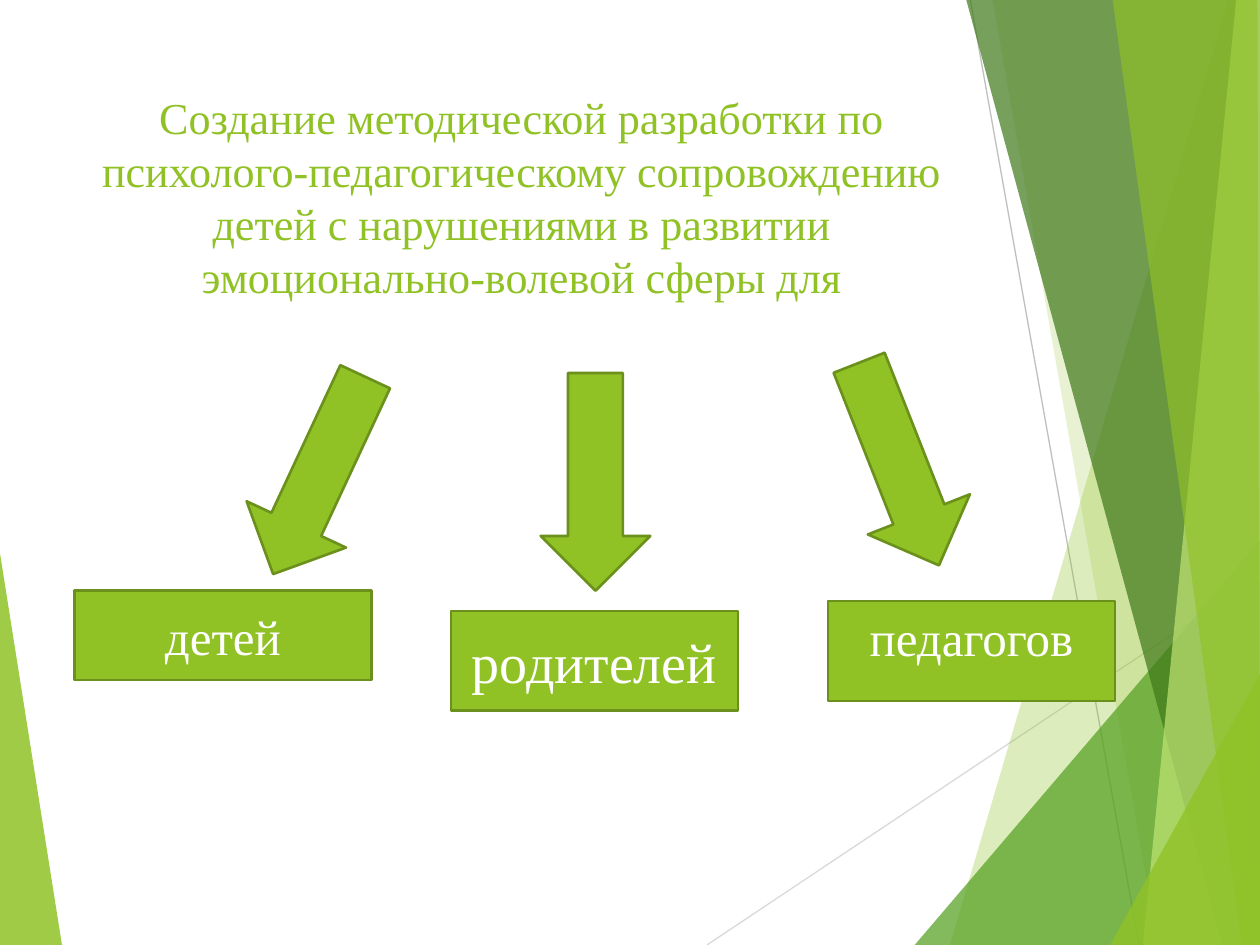
import pptx
import pptx.util
import pptx.dml.color
import pptx.enum.shapes
import pptx.enum.text
import pptx.oxml
import pptx.oxml.ns

Cm, Pt = pptx.util.Cm, pptx.util.Pt
RGBColor = pptx.dml.color.RGBColor
SHAPE = pptx.enum.shapes.MSO_SHAPE
ANCHOR = pptx.enum.text.MSO_ANCHOR
CENTER = pptx.enum.text.PP_ALIGN.CENTER

LIME = RGBColor(0x90, 0xC2, 0x26)
OLIVE = RGBColor(0x6B, 0x90, 0x1C)
GREEN = RGBColor(0x54, 0xA0, 0x21)
FOREST = RGBColor(0x3F, 0x78, 0x19)
PALE = RGBColor(0xC0, 0xE4, 0x74)
GREY = RGBColor(0xBF, 0xBF, 0xBF)
LIGHT_GREY = RGBColor(0xD9, 0xD9, 0xD9)
WHITE = RGBColor(0xFF, 0xFF, 0xFF)
FONT = "Times New Roman"


def write(tf, text, size, color):
    p = tf.paragraphs[0]
    p.alignment = CENTER
    r = p.add_run()
    r.text = text
    for name, value in {"name": FONT, "size": Pt(size)}.items():
        setattr(r.font, name, value)
    r.font.color.rgb = color
    return p


def add_facet(s, x, y, points, color, opacity):
    """Draw a translucent polygon; points are in cm from (x, y)."""
    corners = [(Cm(x + dx), Cm(y + dy)) for dx, dy in points]
    builder = s.shapes.build_freeform(*corners[0])
    builder.add_line_segments(corners[1:], close=True)
    sp = builder.convert_to_shape()
    sp.shadow.inherit = False
    sp.fill.solid()
    sp.fill.fore_color.rgb = color
    sp.line.fill.background()
    clr = sp.fill._xPr.find(".//" + pptx.oxml.ns.qn("a:srgbClr"))
    alpha = pptx.oxml.parse_xml(
        f'<a:alpha {pptx.oxml.ns.nsdecls("a")} val="{opacity * 1000}"/>')
    clr.append(alpha)


def add_rule(s, x1, y1, x2, y2, color):
    line = s.shapes.add_connector(
        pptx.enum.shapes.MSO_CONNECTOR.STRAIGHT, Cm(x1), Cm(y1), Cm(x2), Cm(y2))
    line.line.color.rgb = color
    line.line.width = Pt(0.75)
    line._element.spPr.append(pptx.oxml.parse_xml(
        f'<a:effectLst {pptx.oxml.ns.nsdecls("a")}/>'))


def add_left_facet(s, x, y, w, h):
    add_facet(s, x, y, [(0, 0), (w, h), (0, h)], LIME, 85)


def add_right_facets(s, x, y, w, h):
    # Thin rules behind the facets
    add_rule(s, x - 4.19, y + h, x + w, y + 11.61, LIGHT_GREY)
    add_rule(s, x + 1.12, y, x + 4.52, y + h, GREY)
    # Facets from back to front, each reaching the right edge
    top, bottom = (w, 0), (w, h)
    facets = [
        ([(6.32, 0), (0.71, h), bottom, top], LIME, 30),
        ([(1.57, 0), (4.9, h), bottom, top], LIME, 20),
        ([(0, h), (w, 10.9), bottom], GREEN, 72),
        ([(1.04, 0), (6.2, h), bottom, top], FOREST, 70),
        ([(6.48, 0), (4.6, h), bottom, top], PALE, 70),
        ([(3.99, 0), (6.6, h), bottom, (6.91, 0)], LIME, 65),
        ([(3.94, h), (w, 13.59), bottom], LIME, 80),
    ]
    for points, color, opacity in facets:
        add_facet(s, x, y, points, color, opacity)


def add_title(s, x, y, w, h, text):
    title = s.shapes.title
    box = {"left": x, "top": y, "width": w, "height": h}
    for name, value in box.items():
        setattr(title, name, Cm(value))
    tf = title.text_frame
    tf.word_wrap = True
    tf.auto_size = pptx.enum.text.MSO_AUTO_SIZE.NONE
    tf.vertical_anchor = ANCHOR.TOP
    write(tf, text, 25.2, LIME).line_spacing = Pt(30.3)


def add_solid(s, kind, x, y, w, h):
    sp = s.shapes.add_shape(kind, Cm(x), Cm(y), Cm(w), Cm(h))
    sp.shadow.inherit = False
    sp.fill.solid()
    sp.fill.fore_color.rgb = LIME
    sp.line.color.rgb = OLIVE
    sp.line.width = Pt(1.5)
    return sp


def add_audience(s, x, y, w, h, text, size, anchor, arrow):
    """Draw a labelled box and the arrow that points down to it."""
    dx, dy, angle = arrow
    add_solid(s, SHAPE.DOWN_ARROW, x + dx, y + dy, 2.21, 4.39).rotation = angle
    tf = add_solid(s, SHAPE.RECTANGLE, x, y, w, h).text_frame
    tf.word_wrap = True
    tf.vertical_anchor = anchor
    write(tf, text, size, WHITE)


def main():
    prs = pptx.Presentation()
    prs.slide_width, prs.slide_height = Cm(25.4), Cm(19.05)
    s = prs.slides.add_slide(prs.slide_layouts[5])

    # Background decoration
    add_left_facet(s, 0, 11.15, 1.25, 7.9)
    add_right_facets(s, 18.44, 0, 6.96, 19.05)

    # Title
    add_title(s, 1.7, 1.7, 17.63, 3.66,
              "Создание методической разработки по психолого-педагогическому "
              "сопровождению детей с нарушениями в развитии "
              "эмоционально-волевой сферы для")

    # Audiences
    add_audience(s, 1.5, 11.91, 5.99, 1.8, "детей", 28, ANCHOR.MIDDLE,
                 (3.83, -4.52, 25))
    add_audience(s, 9.09, 12.32, 5.79, 2.01, "родителей", 32, ANCHOR.MIDDLE,
                 (1.81, -4.8, 0))
    add_audience(s, 16.69, 12.12, 5.79, 2.01, "педагогов", 28, ANCHOR.TOP,
                 (0.33, -4.96, 338.5))

    prs.save("out.pptx")


if __name__ == "__main__":
    main()
